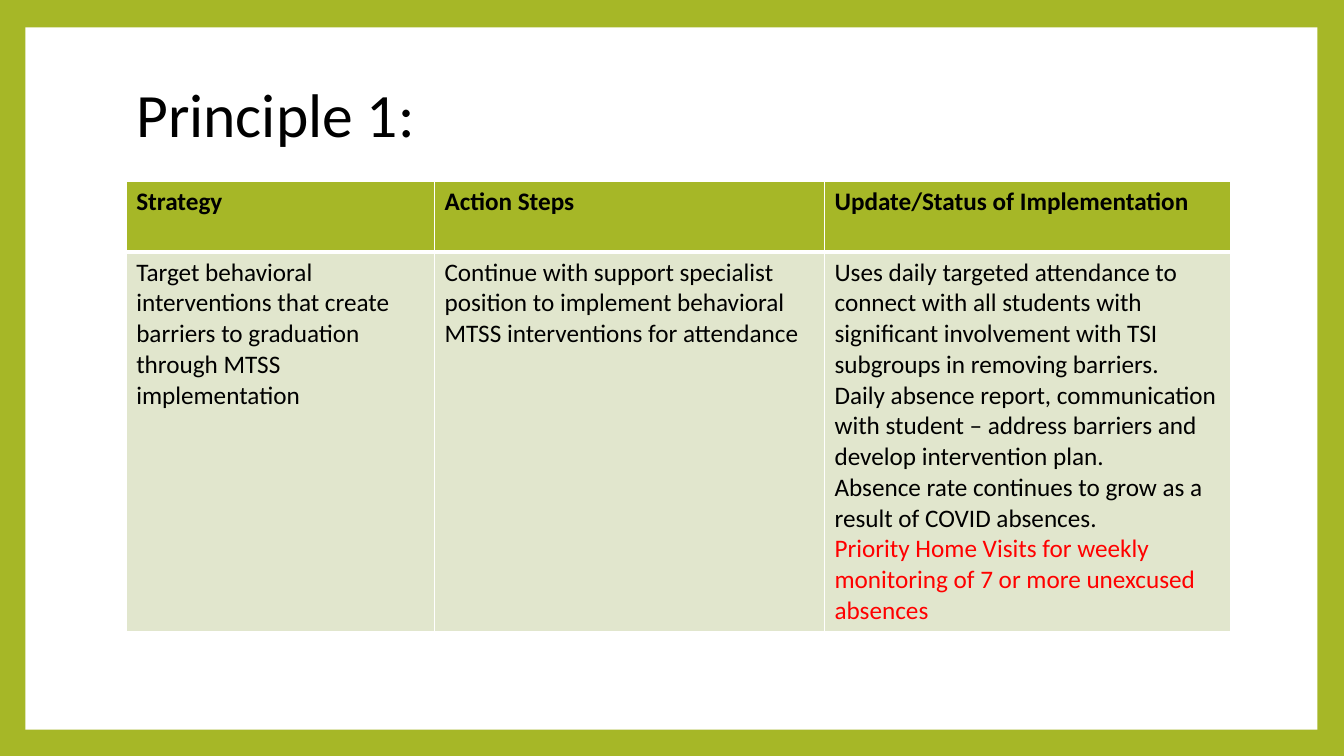
from dataclasses import dataclass

from lxml.etree import SubElement
from pptx import Presentation
from pptx.dml.color import RGBColor as Rgb
from pptx.enum.shapes import MSO_SHAPE as Shape
from pptx.enum.text import MSO_ANCHOR as Anchor, MSO_AUTO_SIZE as Fit, PP_ALIGN as Align
from pptx.oxml.ns import qn
from pptx.util import Cm, Pt


@dataclass(frozen=True)
class Theme:
    """Colours, font and type sizes of the slide."""
    green: str = "A6B727"
    pale: str = "E1E6CD"
    white: str = "FFFFFF"
    black: str = "000000"
    red: str = "FF0000"
    font: str = "Calibri"
    title: int = 44
    body: int = 18


THEME = Theme()
WIDTH, HEIGHT = 33.87, 19.05
HEADS = ["Strategy", "Action Steps", "Update/Status of Implementation"]
PLANS = [
    ["Target behavioral interventions that create barriers to graduation "
     "through MTSS implementation"],
    ["Continue with support specialist position to implement behavioral "
     "MTSS interventions for attendance"],
    ["Uses daily targeted attendance to connect with all students with "
     "significant involvement with TSI subgroups in removing barriers.",
     "Daily absence report, communication with student – address barriers "
     "and develop intervention plan.",
     "Absence rate continues to grow as a result of COVID absences.",
     "Priority Home Visits for weekly monitoring of 7 or more unexcused "
     "absences"],
]


def paint(fill, hue):
    """Give a fill one solid colour."""
    fill.solid()
    fill.fore_color.rgb = Rgb.from_string(hue)


def style(para, size, hue=THEME.black, bold=False):
    """Set the font of a whole paragraph."""
    font = para.font
    font.name, font.size, font.bold = THEME.font, Pt(size), bold
    font.color.rgb = Rgb.from_string(hue)


def edge(cell, base):
    """Draw white cell borders, with the given width in points below."""
    props = cell._tc.get_or_add_tcPr()
    for side, width in (("L", 1), ("R", 1), ("T", 1), ("B", base)):
        line = SubElement(props, qn(f"a:ln{side}"), w=str(Pt(width)))
        fill = SubElement(line, qn("a:solidFill"))
        SubElement(fill, qn("a:srgbClr"), val=THEME.white)


def frame(slide, box):
    """Lay a white panel inside a green border, behind the title."""
    paint(slide.background.fill, THEME.green)
    left, top, wide, high = box
    side, edge_top = 0.64, 0.69
    panel = slide.shapes.add_shape(
        Shape.RECTANGLE, Cm(left + side), Cm(top + edge_top),
        Cm(wide - 2 * side - 0.03), Cm(high - 2 * edge_top + 0.03))
    panel.shadow.inherit = False
    paint(panel.fill, THEME.white)
    panel.line.fill.background()
    slide.shapes.title.element.addprevious(panel.element)


def head(slide, box, text):
    """Place the slide title in the box."""
    title = slide.shapes.title
    title.left, title.top, title.width, title.height = map(Cm, box)
    body = title.text_frame
    body.text = text
    body.auto_size = Fit.NONE
    body.vertical_anchor = Anchor.MIDDLE
    para = body.paragraphs[0]
    para.alignment = Align.LEFT
    para.line_spacing = 0.9
    style(para, THEME.title)


def grid(slide, box, shares, top_row):
    """Fill the box with the strategy table."""
    left, top, wide, high = box
    table = slide.shapes.add_table(2, len(HEADS), *map(Cm, box)).table
    for col, share in zip(table.columns, shares):
        col.width = Cm(wide * share / sum(shares))
    table.rows[0].height = Cm(top_row)
    table.rows[1].height = Cm(high - top_row)
    for col, (name, plan) in enumerate(zip(HEADS, PLANS)):
        for row, lines in enumerate(([name], plan)):
            cell = table.cell(row, col)
            edge(cell, 1 if row else 3)
            paint(cell.fill, THEME.pale if row else THEME.green)
            cell.text = "\n".join(lines)
            for para in cell.text_frame.paragraphs:
                urgent = para.text.startswith("Priority")
                style(para, THEME.body, THEME.red if urgent else THEME.black, not row)


def main():
    """Build and save the slide."""
    deck = Presentation()
    deck.slide_width, deck.slide_height = Cm(WIDTH), Cm(HEIGHT)
    slide = deck.slides.add_slide(deck.slide_layouts[5])
    frame(slide, (0, 0, WIDTH, HEIGHT))
    head(slide, (3.18, 1.07, 27.43, 3.76), "Principle 1:")
    grid(slide, (3.18, 4.57, 27.84, 11.15), (7.77, 9.83, 10.24), 1.78)
    deck.save("out.pptx")


if __name__ == "__main__":
    main()
